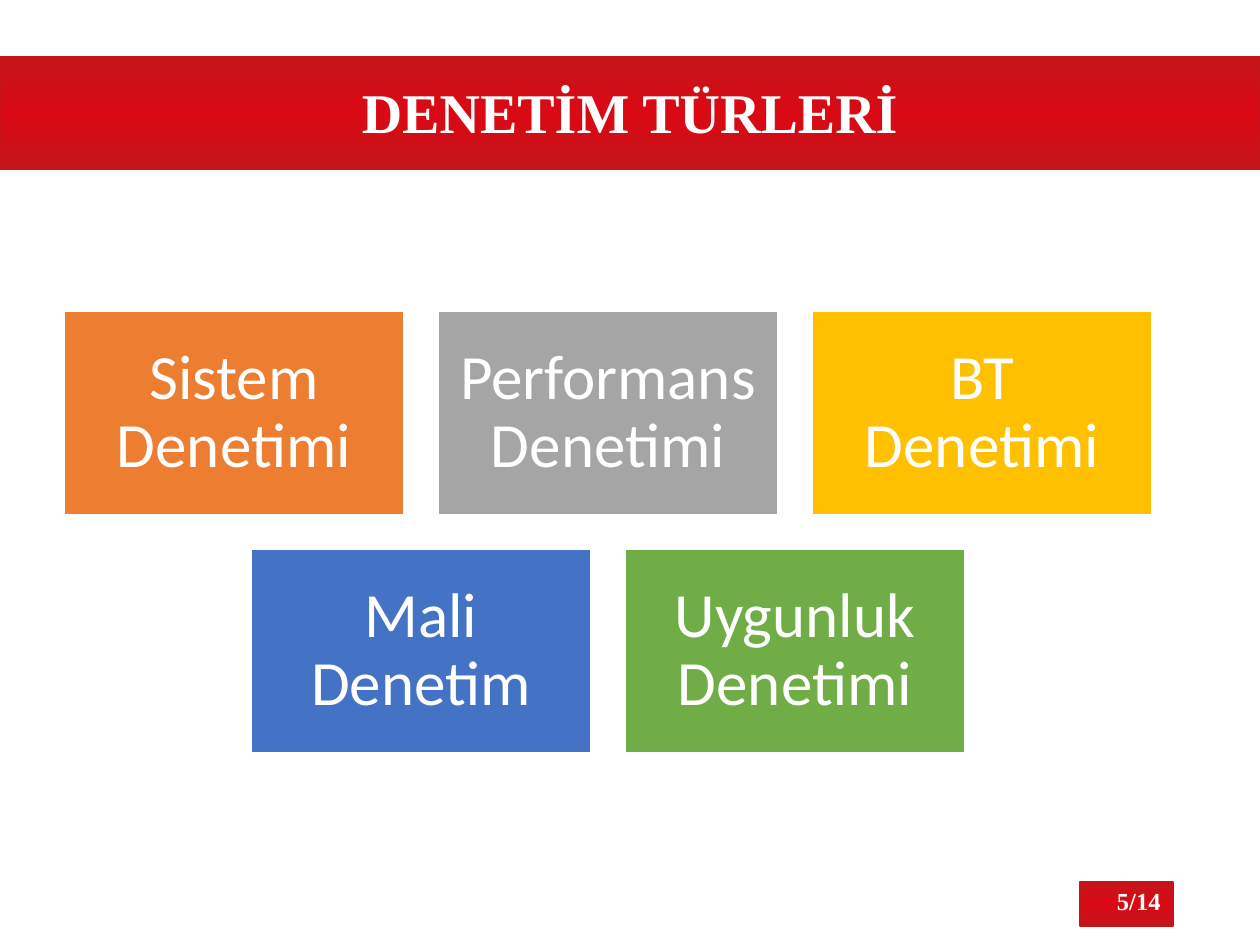
from copy import deepcopy

from pptx import Presentation
from pptx.dml.color import RGBColor
from pptx.enum.shapes import MSO_SHAPE
from pptx.enum.text import MSO_ANCHOR, PP_ALIGN
from pptx.util import Emu, Pt

RECTANGLE = MSO_SHAPE.RECTANGLE
MIDDLE = MSO_ANCHOR.MIDDLE
CENTER, RIGHT = PP_ALIGN.CENTER, PP_ALIGN.RIGHT
COLORS = {
    "white": "FFFFFF",
    "dark red": "C5141A",
    "bright red": "D90A14",
    "orange": "ED7D31",
    "gray": "A5A5A5",
    "yellow": "FFC000",
    "blue": "4472C4",
    "green": "70AD47",
}


def px(length):
    return Emu(round(length * 914400 / 126))


def write(shape, text, size, font, align, bold, spacing, inset):
    frame = shape.text_frame
    frame.word_wrap = True
    frame.vertical_anchor = MIDDLE
    if inset:
        frame.margin_left = frame.margin_right = px(inset)
        frame.margin_top = frame.margin_bottom = px(inset)
    paragraph = frame.paragraphs[0]
    paragraph.alignment = align
    paragraph.line_spacing = spacing
    run = paragraph.add_run()
    run.text = text
    run.font.size = Pt(size)
    run.font.name = font
    run.font.bold = bold
    run.font.color.rgb = RGBColor.from_string(COLORS["white"])


prs = Presentation()
prs.slide_width, prs.slide_height = px(1260), px(945)
slide = prs.slides.add_slide(prs.slide_layouts[6])
shapes = slide.shapes

for bounds in [(0, 57, 1260, 112), (1080, 882, 93, 44)]:
    band = shapes.add_shape(RECTANGLE, *map(px, bounds))
    band.shadow.inherit = False
    band.line.color.rgb = RGBColor.from_string(COLORS["dark red"])
    band.line.width = Pt(1)
    band.fill.gradient()
    band.fill.gradient_angle = 90
    first_stop = band._element.spPr.find(".//{*}gs")
    first_stop.addnext(deepcopy(first_stop))
    stops = zip(band.fill.gradient_stops, (0, 0.5, 1),
                ("dark red", "bright red", "dark red"))
    for stop, position, color in stops:
        stop.position = position
        stop.color.rgb = RGBColor.from_string(COLORS[color])

title = shapes.add_textbox(px(0), px(30), px(1260), px(170))
write(title, "DENETİM TÜRLERİ", 32, "Times New Roman", CENTER, True, 0.9, None)

TILE_WIDTH, TILE_HEIGHT, GAP = 340, 204, 34
TILES_CENTER, TILES_TOP = 608, 311
audit_rows = [
    [("Sistem Denetimi", "orange"), ("Performans Denetimi", "gray"), ("BT Denetimi", "yellow")],
    [("Mali Denetim", "blue"), ("Uygunluk Denetimi", "green")],
]
for row, audits in enumerate(audit_rows):
    row_width = len(audits) * (TILE_WIDTH + GAP) - GAP
    left = TILES_CENTER - row_width // 2
    top = TILES_TOP + row * (TILE_HEIGHT + GAP)
    for column, (audit, color) in enumerate(audits):
        tile = shapes.add_shape(RECTANGLE, px(left + column * (TILE_WIDTH + GAP)), px(top),
                                px(TILE_WIDTH), px(TILE_HEIGHT))
        tile.shadow.inherit = False
        tile.fill.solid()
        tile.fill.fore_color.rgb = RGBColor.from_string(COLORS[color])
        tile.line.color.rgb = RGBColor.from_string(COLORS["white"])
        tile.line.width = Pt(1)
        write(tile, audit, 36, "Calibri", CENTER, False, 0.9, 19)

page_number = shapes.add_textbox(px(890), px(876), px(283), px(50))
write(page_number, "5/14", 14, "Times New Roman", RIGHT, True, 1.0, None)

prs.save("out.pptx")
